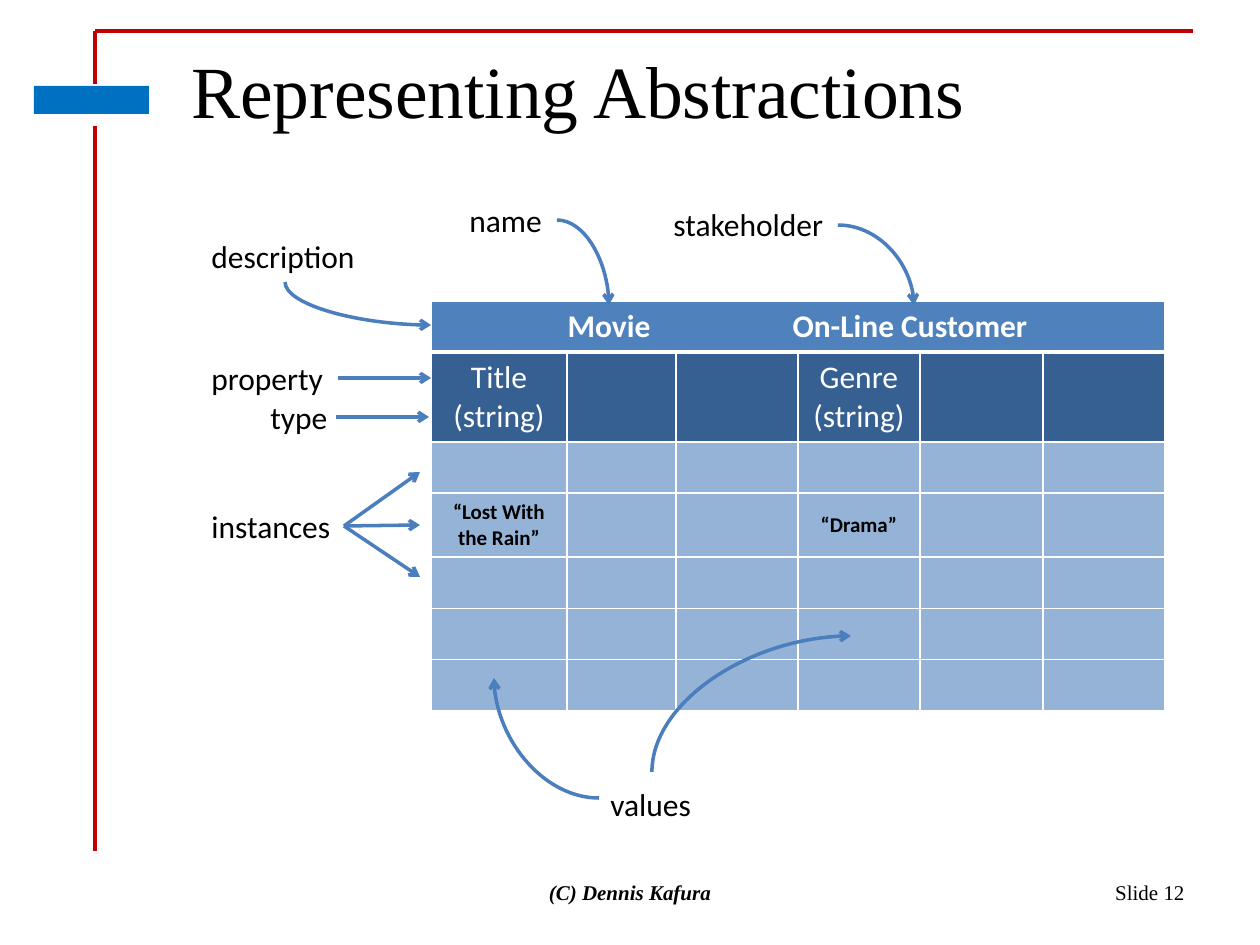
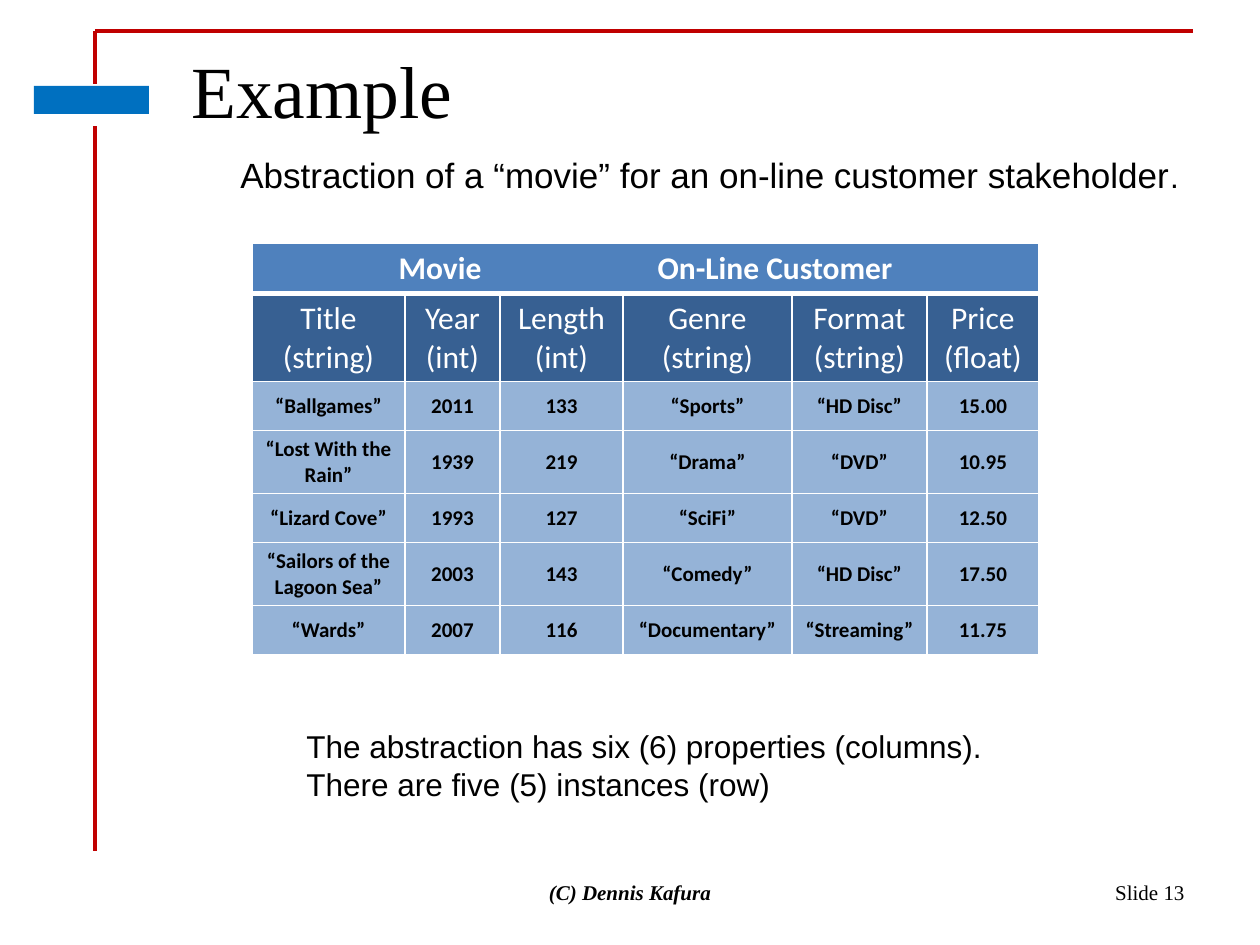
from typing import NamedTuple

from pptx import Presentation
from pptx.dml.color import RGBColor
from pptx.enum.shapes import MSO_CONNECTOR as CONN, MSO_SHAPE as SHAPE
from pptx.enum.text import MSO_ANCHOR as ANCHOR, MSO_AUTO_SIZE as AUTO, PP_ALIGN as ALIGN
from pptx.oxml.xmlchemy import OxmlElement as Element
from pptx.util import Emu, Pt

PX_PER_INCH = 126
WHITE = RGBColor(0xFF, 0xFF, 0xFF)
BLACK = RGBColor(0x00, 0x00, 0x00)
RED = RGBColor(0xC0, 0x00, 0x00)
BADGE_BLUE = RGBColor(0x00, 0x70, 0xC0)
ARROW_BLUE = RGBColor(0x4B, 0x7E, 0xBC)
HEADER_BLUE = RGBColor(0x4F, 0x81, 0xBD)
PROPERTY_BLUE = RGBColor(0x37, 0x60, 0x92)
INSTANCE_BLUE = RGBColor(0x95, 0xB3, 0xD7)
SERIF, SANS, BODY = "Times New Roman", "Arial", "Calibri"


class Box(NamedTuple):
    x: int
    y: int
    w: int
    h: int


class Label(NamedTuple):
    text: str
    box: Box


class Arrow(NamedTuple):
    start: tuple[int, int]
    end: tuple[int, int]
    preset: str = "curvedConnector2"
    rot: int = 0
    flips: str = ""


class Abstraction(NamedTuple):
    x: int
    y: int
    cols: tuple[int, ...]
    rows: tuple[int, ...]
    header_tabs: tuple[int, int]
    properties: tuple[str, ...]
    instances: tuple[tuple[str, ...], ...]


BADGE = Box(34, 86, 115, 28)
LABELS = (
    Label("instances", Box(199, 501, 145, 50)),
    Label("values", Box(598, 779, 107, 50)),
    Label("property", Box(199, 353, 139, 50)),
    Label("stakeholder", Box(661, 199, 176, 50)),
    Label("name", Box(457, 195, 98, 50)),
    Label("description", Box(199, 231, 170, 50)),
    Label("type", Box(258, 392, 83, 50)),
)
INSTANCE_ENDS = ((420, 525), (420, 472), (420, 577))
ARROWS = (
    Arrow((599, 798), (494, 678), rot=180),
    Arrow((652, 772), (851, 636), rot=90, flips="HV"),
    Arrow((338, 378), (431, 378), "curvedConnector3"),
    Arrow((838, 225), (914, 305)),
    Arrow((557, 220), (609, 305)),
    Arrow((285, 282), (431, 325), rot=270, flips="H"),
    Arrow((336, 417), (429, 417), "curvedConnector3"),
)
EMPTY = ("",) * 6
OUTLINE = Abstraction(
    431, 301, (136, 109, 122, 122, 123, 122), (51, 90, 51, 64, 51, 51, 51), (124, 349),
    ("Title\n(string)", "", "", "Genre\n(string)", "", ""),
    (EMPTY, ("“Lost With the Rain”", "", "", "“Drama”", "", ""), EMPTY, EMPTY, EMPTY),
)
MOVIES = Abstraction(
    252, 243, (153, 95, 123, 169, 135, 112), (49, 88, 49, 63, 49, 63, 49), (134, 393),
    ("Title\n(string)", "Year\n(int)", "Length\n(int)",
     "Genre\n(string)", "Format\n(string)", "Price\n(float)"),
    (
        ("“Ballgames”", "2011", "133", "“Sports”", "“HD Disc”", "15.00"),
        ("“Lost With the Rain”", "1939", "219", "“Drama”", "“DVD”", "10.95"),
        ("“Lizard Cove”", "1993", "127", "“SciFi”", "“DVD”", "12.50"),
        ("“Sailors of the Lagoon Sea”", "2003", "143", "“Comedy”", "“HD Disc”", "17.50"),
        ("“Wards”", "2007", "116", "“Documentary”", "“Streaming”", "11.75"),
    ),
)


def px(n: float) -> Emu:
    return Emu(round(n * 914400 / PX_PER_INCH))


def write(p, text: str, *, size: int = 18, font: str = BODY, color: RGBColor = BLACK,
          bold: bool = False, italic: bool = False, align=None) -> None:
    if align is not None:
        p.alignment = align
    for i, part in enumerate(text.split("\n")):
        if i:
            p.add_line_break()
        r = p.add_run()
        r.text = part
        r.font.size = Pt(size)
        r.font.name = font
        r.font.color.rgb = color
        r.font.bold = bold
        r.font.italic = italic


def text_box(slide, box: Box, *, wrap: bool = True, grow: bool = False, anchor=ANCHOR.TOP):
    sp = slide.shapes.add_textbox(*map(px, box))
    tf = sp.text_frame
    tf.word_wrap = wrap
    tf.auto_size = AUTO.SHAPE_TO_FIT_TEXT if grow else AUTO.NONE
    tf.vertical_anchor = anchor
    return sp


def line(slide, start: tuple[float, float], end: tuple[float, float], color: RGBColor,
         width: float, arrow: bool = False):
    sp = slide.shapes.add_connector(CONN.STRAIGHT, *map(px, (*start, *end)))
    sp.line.color.rgb = color
    sp.line.width = Pt(width)
    if arrow:
        tail = Element("a:tailEnd")
        tail.set("type", "arrow")
        sp.line._get_or_add_ln().append(tail)
    sp._element.spPr.append(Element("a:effectLst"))
    return sp


def curve(slide, a: Arrow) -> None:
    (x1, y1), (x2, y2) = a.start, a.end
    w, h = abs(x2 - x1), abs(y2 - y1)
    if a.rot in (90, 270):
        w, h = h, w
    left, top = (x1 + x2 - w) / 2, (y1 + y2 - h) / 2
    sp = line(slide, (left, top), (left + w, top + h), ARROW_BLUE, 2, arrow=True)
    spPr = sp._element.spPr
    spPr.prstGeom.set("prst", a.preset)
    if a.rot:
        spPr.xfrm.set("rot", str(a.rot * 60000))
    for flip in a.flips:
        spPr.xfrm.set(f"flip{flip}", "1")


def fill_cell(cell, color: RGBColor, top: int = 1, bottom: int = 1) -> None:
    cell.fill.solid()
    cell.fill.fore_color.rgb = color
    cell.vertical_anchor = ANCHOR.MIDDLE
    tcPr = cell._tc.get_or_add_tcPr()
    for i, (side, width) in enumerate(zip("LRTB", (1, 1, top, bottom))):
        ln = Element(f"a:ln{side}")
        ln.set("w", str(Pt(width)))
        fill = Element("a:solidFill")
        clr = Element("a:srgbClr")
        clr.set("val", str(WHITE))
        fill.append(clr)
        ln.append(fill)
        tcPr.insert(i, ln)


def add_tabs(p, stops: tuple[int, ...]) -> None:
    tabs = Element("a:tabLst")
    for stop in stops:
        tab = Element("a:tab")
        tab.set("pos", str(px(stop)))
        tab.set("algn", "l")
        tabs.append(tab)
    p._p.get_or_add_pPr().append(tabs)


def abstraction_table(slide, a: Abstraction) -> None:
    frame = slide.shapes.add_table(len(a.rows), len(a.cols), px(a.x), px(a.y),
                                   px(sum(a.cols)), px(sum(a.rows)))
    table = frame.table
    table.horz_banding = False
    for col, w in zip(table.columns, a.cols):
        col.width = px(w)
    for row, h in zip(table.rows, a.rows):
        row.height = px(h)

    header = table.cell(0, 0)
    header.merge(table.cell(0, len(a.cols) - 1))
    for cell in table.rows[0].cells:
        fill_cell(cell, HEADER_BLUE, bottom=3)
    p = header.text_frame.paragraphs[0]
    add_tabs(p, a.header_tabs)
    write(p, "\tMovie\tOn-Line Customer", color=WHITE, bold=True, align=ALIGN.LEFT)

    for i, texts in enumerate((a.properties, *a.instances), 1):
        is_property = i == 1
        style = dict(color=WHITE) if is_property else dict(size=12, bold=True)
        for cell, text in zip(table.rows[i].cells, texts):
            fill_cell(cell, PROPERTY_BLUE if is_property else INSTANCE_BLUE,
                      top=3 if is_property else 1)
            if text:
                write(cell.text_frame.paragraphs[0], text, align=ALIGN.CENTER, **style)


def base_slide(prs, title: str, number: int):
    slide = prs.slides.add_slide(prs.slide_layouts[6])
    line(slide, (95, 31), (1193, 31), RED, 2)
    badge = slide.shapes.add_shape(SHAPE.RECTANGLE, *map(px, BADGE))
    badge.shadow.inherit = False
    badge.fill.solid()
    badge.fill.fore_color.rgb = BADGE_BLUE
    badge.line.fill.background()
    for top, bottom in ((31, 84), (126, 851)):
        line(slide, (95, top), (95, bottom), RED, 1.75)
    sp = text_box(slide, Box(179, 39, 1018, 98))
    write(sp.text_frame.paragraphs[0], title, size=42, font=SERIF)
    sp = text_box(slide, Box(903, 861, 294, 63), anchor=ANCHOR.MIDDLE)
    write(sp.text_frame.paragraphs[0], f"Slide {number}", size=12, font=SERIF,
          align=ALIGN.RIGHT)
    sp = text_box(slide, Box(430, 861, 400, 63), anchor=ANCHOR.MIDDLE)
    write(sp.text_frame.paragraphs[0], "(C) Dennis Kafura", size=12, font=SERIF,
          bold=True, italic=True, align=ALIGN.CENTER)
    return slide


def representing_slide(prs) -> None:
    slide = base_slide(prs, "Representing Abstractions", 12)
    abstraction_table(slide, OUTLINE)
    boxes = {}
    for label in LABELS:
        sp = text_box(slide, label.box, wrap=False, grow=True)
        write(sp.text_frame.paragraphs[0], label.text)
        boxes[label.text] = sp
    for end in INSTANCE_ENDS:
        sp = line(slide, (344, 526), end, ARROW_BLUE, 2, arrow=True)
        sp.begin_connect(boxes["instances"], 3)
    for arrow in ARROWS:
        curve(slide, arrow)


def example_slide(prs) -> None:
    slide = base_slide(prs, "Example", 13)
    sp = text_box(slide, Box(228, 147, 970, 55), wrap=False, grow=True)
    p = sp.text_frame.paragraphs[0]
    write(p, "Abstraction of a “movie” for an on-line customer stakeholder",
          size=20, font=SANS)
    write(p, ".", font=SANS)
    tf = text_box(slide, Box(294, 721, 746, 89), grow=True).text_frame
    write(tf.paragraphs[0], "The abstraction has six (6) properties (columns).", font=SANS)
    write(tf.add_paragraph(), "There are five (5) instances (row)", font=SANS)
    abstraction_table(slide, MOVIES)


def main() -> None:
    prs = Presentation()
    prs.slide_width, prs.slide_height = px(1260), px(945)
    representing_slide(prs)
    example_slide(prs)
    prs.save("out.pptx")


if __name__ == "__main__":
    main()
